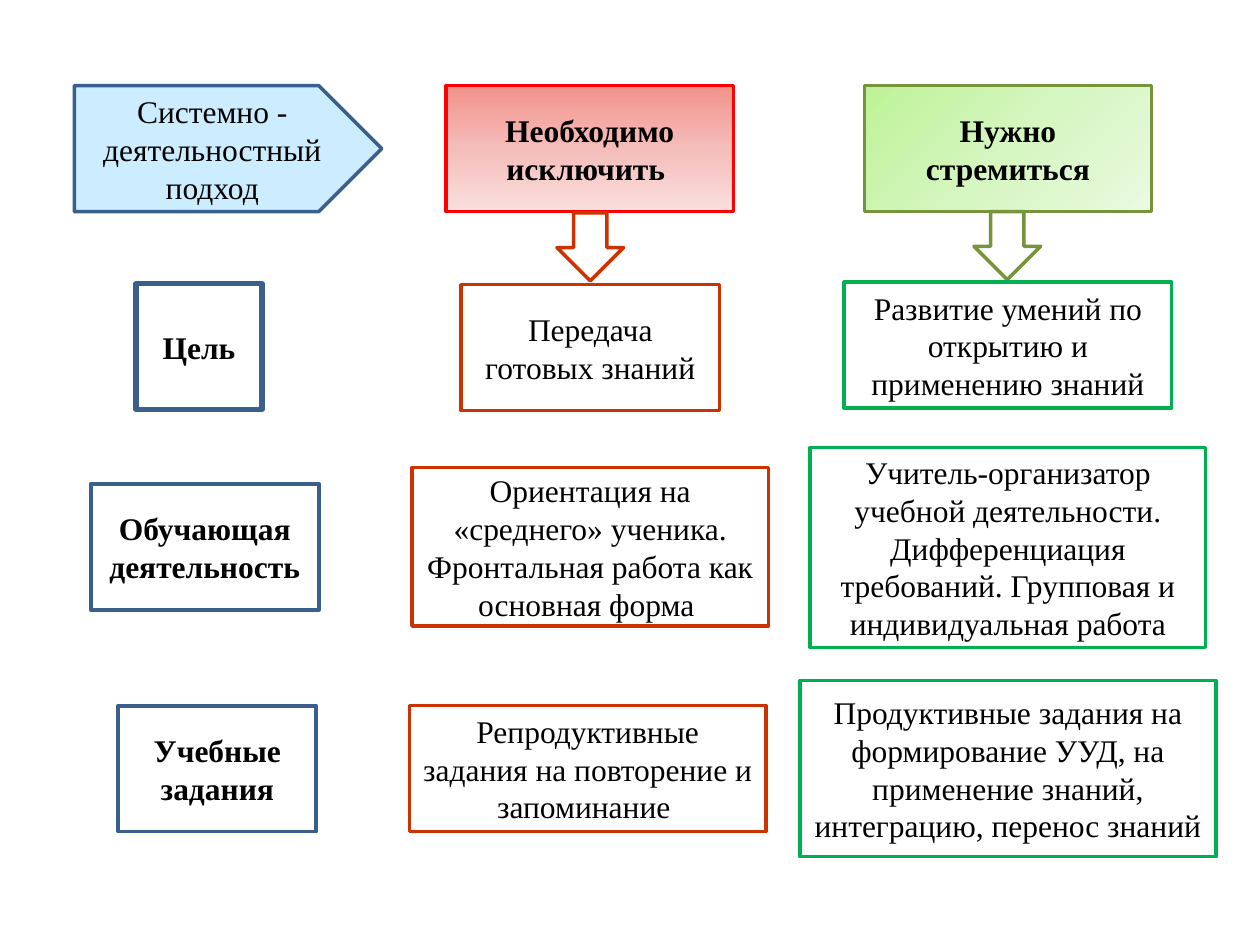
from copy import deepcopy

from pptx import Presentation
from pptx import util as u
from pptx.dml.color import RGBColor
from pptx.enum import shapes, text

PX = 9144
FONT = "Times New Roman"
SHAPE = shapes.MSO_SHAPE
C = {
    "text": "000000",
    "blue": "3A5F8C",
    "sky": "CCECFF",
    "brick": "CC3300",
    "red": "FF0000",
    "olive": "77933C",
    "green": "00B050",
}
RED_FADE = (270, ["F2928C", "F5BDBA", "F9DFDE"])
GREEN_FADE = (315, ["BEF297", "D5F6C0", "EAFAE0"])
ROW_CENTERS = (207, 366, 542)
HEADER_HEIGHT = 100


def rgb(name):
    return RGBColor.from_string(C[name])


def fill_gradient(sp, angle, colors):
    sp.fill.gradient()
    sp.fill.gradient_angle = angle
    first = sp._element.spPr.find(".//{*}gs")
    first.addnext(deepcopy(first))
    for i, (stop, color) in enumerate(zip(sp.fill.gradient_stops, colors)):
        stop.color.rgb = RGBColor.from_string(color)
        stop.position = i / 2


def add_box(s, kind, box, line, width=2, fill=None, fade=None, words="", bold=False):
    sp = s.shapes.add_shape(kind, *(v * PX for v in box))
    sp.shadow.inherit = False
    sp.line.color.rgb = rgb(line)
    sp.line.width = u.Pt(width)
    if fade:
        fill_gradient(sp, *fade)
    elif fill:
        sp.fill.solid()
        sp.fill.fore_color.rgb = rgb(fill)
    else:
        sp.fill.background()
    if words:
        tf = sp.text_frame
        tf.word_wrap = True
        tf.vertical_anchor = text.MSO_ANCHOR.MIDDLE
        p = tf.paragraphs[0]
        p.text = words
        p.alignment = text.PP_ALIGN.CENTER
        p.font.name = FONT
        p.font.size = u.Pt(18)
        p.font.bold = bold
        p.font.color.rgb = rgb("text")


def add_rows(s, box, rows, line, bold=False):
    x, y, w, h = box
    for center, (dx, dy, rw, rh, width, words) in zip(ROW_CENTERS, rows):
        place = (x + (w - rw) // 2 + dx, y + center - rh // 2 + dy, rw, rh)
        add_box(s, SHAPE.RECTANGLE, place, line, width, words=words, bold=bold)


def add_label_column(s, box, title, rows):
    x, y, w, h = box
    add_box(s, SHAPE.PENTAGON, (x, y, w, HEADER_HEIGHT), "blue", fill="sky", words=title)
    add_rows(s, box, rows, "blue", bold=True)


def add_approach_column(s, box, title, fade, header_line, arrow_line, row_line, nudge, rows):
    x, y, w, h = box
    add_box(s, SHAPE.RECTANGLE, (x, y, w, HEADER_HEIGHT), header_line,
            fade=fade, words=title, bold=True)
    arrow = (x + (w - 53) // 2 + nudge, y + HEADER_HEIGHT + nudge, 53, 54)
    add_box(s, SHAPE.DOWN_ARROW, arrow, arrow_line)
    add_rows(s, box, rows, row_line)


def main():
    prs = Presentation()
    prs.slide_width, prs.slide_height = 1000 * PX, 750 * PX
    s = prs.slides.add_slide(prs.slide_layouts[6])
    add_label_column(s, (59, 68, 244, 612), "Системно - деятельностный подход", [
        (-23, 0, 100, 100, 3, "Цель"),
        (-18, 0, 181, 100, 2.25, "Обучающая деятельность"),
        (-8, 0, 157, 100, 2.25, "Учебные задания"),
    ])
    add_approach_column(
        s, (354, 68, 228, 612), "Необходимо исключить ", RED_FADE, "red", "brick", "brick", 1, [
            (1, 1, 205, 100, 2, "Передача готовых знаний"),
            (1, 0, 283, 126, 2, "Ориентация на «среднего» ученика. "
                                "Фронтальная работа как основная форма "),
            (-1, 0, 283, 100, 2, "Репродуктивные задания на повторение и запоминание "),
        ])
    add_approach_column(
        s, (686, 68, 228, 612), "Нужно стремиться", GREEN_FADE, "olive", "olive", "green", 0, [
            (0, -1, 260, 100, 2, "Развитие умений по открытию и применению знаний"),
            (0, 0, 314, 159, 2, "Учитель-организатор учебной деятельности. Дифференциация "
                                "требований. Групповая и индивидуальная работа"),
            (0, 0, 330, 140, 2, "Продуктивные задания на формирование УУД, на применение "
                                "знаний, интеграцию, перенос знаний"),
        ])
    prs.save("out.pptx")


if __name__ == "__main__":
    main()
